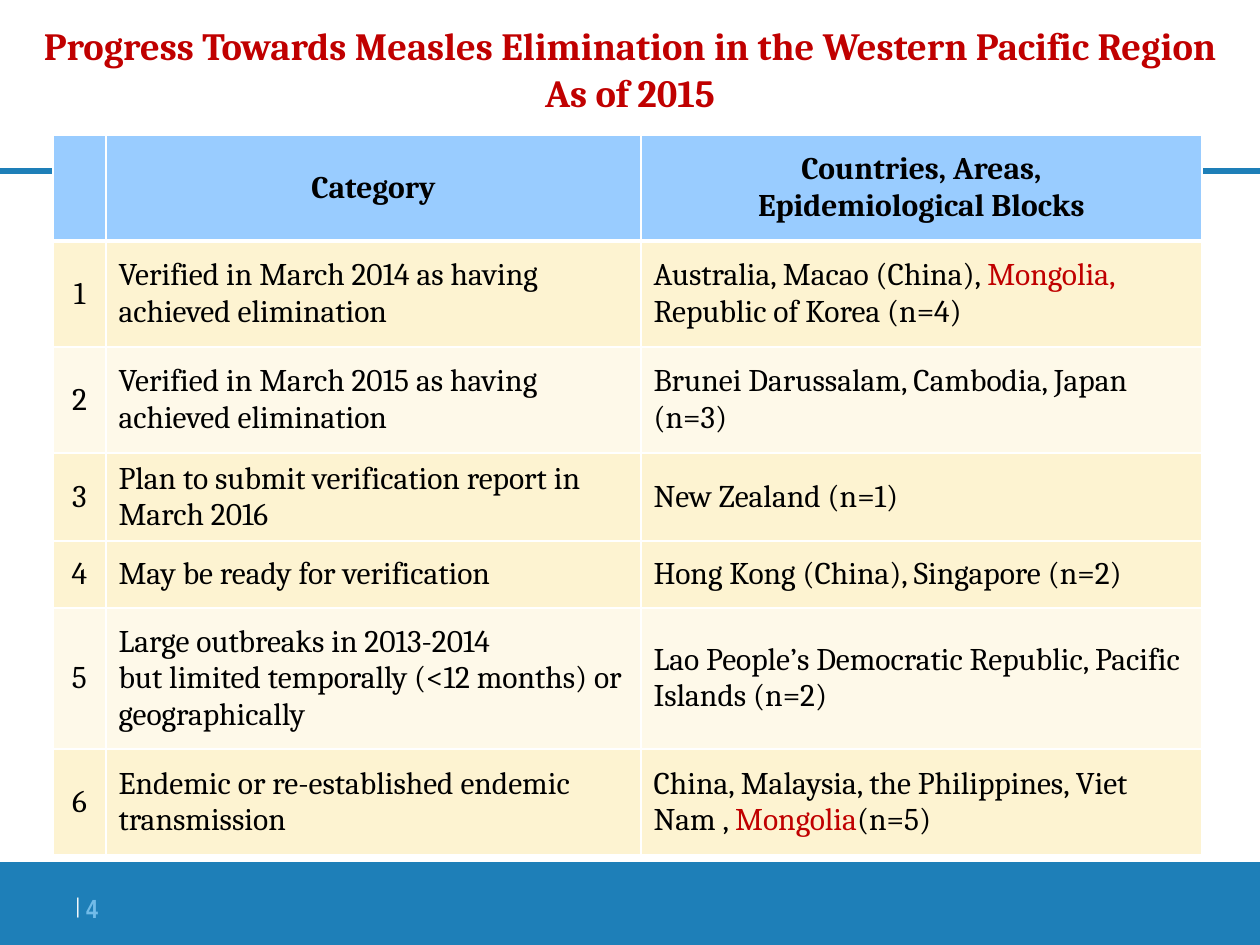
import lxml.etree
import pptx
import pptx.dml.color
import pptx.enum.shapes
import pptx.enum.text
import pptx.oxml.ns
import pptx.util

PX = 914400 / 126
COLORS = {
    "blue": "1E7FB8", "pale_blue": "72BBE8", "header": "99CCFF",
    "cream": "FDF3D1", "light_cream": "FEF9E9",
    "red": "C00000", "black": "000000", "white": "FFFFFF",
}
RGB = {name: pptx.dml.color.RGBColor.from_string(h) for name, h in COLORS.items()}
ALIGN = pptx.enum.text.PP_ALIGN
ANCHOR = pptx.enum.text.MSO_ANCHOR
qn = pptx.oxml.ns.qn


def px(*values):
    return [round(v * PX) for v in values]


def add_run(p, text, size, font, color, bold=False):
    r = p.add_run()
    r.text = text
    r.font.size = pptx.util.Pt(size)
    r.font.name = font
    r.font.bold = bold
    r.font.color.rgb = RGB[color]
    return r


prs = pptx.Presentation()
prs.slide_width, prs.slide_height = px(1260, 945)
s = prs.slides.add_slide(prs.slide_layouts[5])

# Rule behind the table and footer band
rule = s.shapes.add_connector(
    pptx.enum.shapes.MSO_CONNECTOR.STRAIGHT, *px(0, 171, 1260, 171))
rule.line.color.rgb = RGB["blue"]
rule.line.width = pptx.util.Pt(3)
lxml.etree.SubElement(rule.element.spPr, qn("a:effectLst"))

band = s.shapes.add_shape(
    pptx.enum.shapes.MSO_SHAPE.RECTANGLE, *px(0, 862, 1260, 83))
band.shadow.inherit = False
band.fill.solid()
band.fill.fore_color.rgb = RGB["blue"]
band.line.fill.background()

# Page number
tf = s.shapes.add_textbox(*px(49, 882, 49, 45)).text_frame
tf.word_wrap = True
tf.margin_left = tf.margin_right = tf.margin_top = tf.margin_bottom = 0
p = tf.paragraphs[0]
p.alignment = ALIGN.RIGHT
bar = add_run(p, "|", 21, "Arial Narrow", "white")
bar.font._element.set("baseline", "14000")
add_run(p, " 4", 15, "Arial Narrow", "pale_blue", bold=True)

# Title
title = s.shapes.title
title.left, title.top, title.width, title.height = px(0, 16, 1260, 106)
tf = title.text_frame
tf.word_wrap = True
tf.auto_size = pptx.enum.text.MSO_AUTO_SIZE.NONE
tf.vertical_anchor = ANCHOR.TOP
for i, line in enumerate((
        "Progress Towards Measles Elimination in the Western Pacific Region",
        "As of 2015")):
    p = tf.add_paragraph() if i else tf.paragraphs[0]
    p.alignment = ALIGN.CENTER
    add_run(p, line, 22, "Cambria", "red", bold=True)

# Table: (height, fill, cells); a cell is a list of paragraphs,
# a paragraph is a list of alternating black and red runs
ROWS = [
    (106, "header", [[], [["Category"]],
                     [["Countries, Areas,"], ["Epidemiological Blocks"]]]),
    (106, "cream", [[["1"]],
                    [["Verified in March 2014 as having achieved elimination"]],
                    [["Australia, Macao (China), ", "Mongolia, ",
                      "Republic of Korea (n=4)"]]]),
    (106, "light_cream", [[["2"]],
                          [["Verified in March 2015 as having achieved elimination"]],
                          [["Brunei Darussalam, Cambodia, Japan (n=3)"]]]),
    (85, "cream", [[["3"]],
                   [["Plan to submit verification report in March 2016"]],
                   [["New Zealand (n=1)"]]]),
    (67, "cream", [[["4"]],
                   [["May be ready for verification"]],
                   [["Hong Kong (China), Singapore (n=2)"]]]),
    (141, "light_cream", [[["5"]],
                          [["Large outbreaks in 2013-2014"],
                           ["but limited temporally (<12 months) or geographically"]],
                          [["Lao People’s Democratic Republic, Pacific Islands (n=2)"]]]),
    (106, "cream", [[["6"]],
                    [["Endemic or re-established endemic transmission"]],
                    [["China, Malaysia, the Philippines, Viet Nam , ",
                      "Mongolia", "(n=5)"]]]),
]
COLS = [53, 535, 561]

table = s.shapes.add_table(
    len(ROWS), len(COLS),
    *px(53, 135, sum(COLS), sum(row[0] for row in ROWS))).table
table.first_row = table.horz_banding = False
for column, width in zip(table.columns, px(*COLS)):
    column.width = width

for i, (height, fill, cells) in enumerate(ROWS):
    table.rows[i].height = px(height)[0]
    for j, paragraphs in enumerate(cells):
        cell = table.cell(i, j)
        cell.vertical_anchor = ANCHOR.MIDDLE
        tcPr = cell._tc.get_or_add_tcPr()
        for side in "LRTB":
            thick = (i, side) in ((0, "B"), (1, "T"))
            ln = lxml.etree.SubElement(
                tcPr, qn("a:ln" + side), w=str(pptx.util.Pt(3 if thick else 1)))
            solid = lxml.etree.SubElement(ln, qn("a:solidFill"))
            lxml.etree.SubElement(solid, qn("a:srgbClr"), val=COLORS["white"])
        cell.fill.solid()
        cell.fill.fore_color.rgb = RGB[fill]
        tf = cell.text_frame
        for k, runs in enumerate(paragraphs):
            p = tf.add_paragraph() if k else tf.paragraphs[0]
            p.alignment = ALIGN.CENTER if i == 0 or j == 0 else ALIGN.LEFT
            for n, text in enumerate(runs):
                add_run(p, text, 18, "Cambria", "red" if n % 2 else "black", bold=i == 0)

prs.save("out.pptx")
